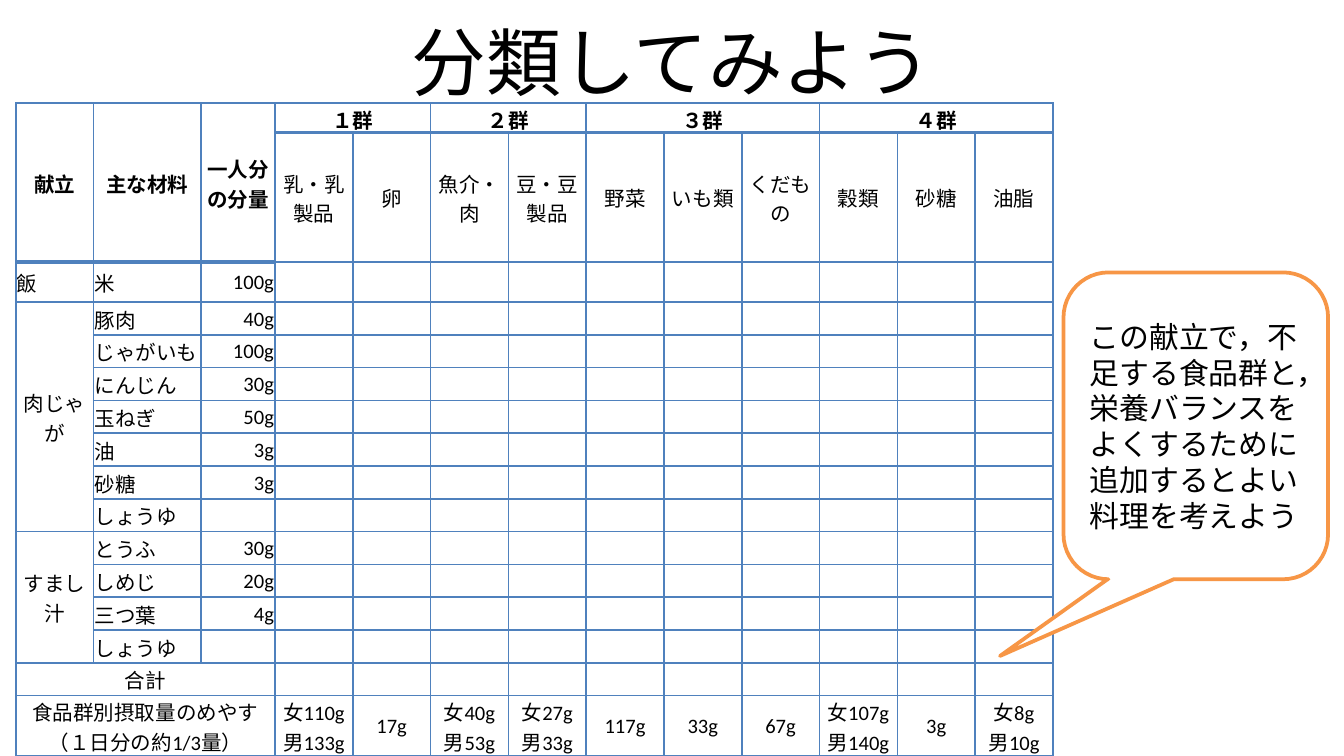
from dataclasses import dataclass

from lxml.etree import SubElement
from pptx import Presentation
from pptx.dml.color import RGBColor
from pptx.enum.shapes import MSO_SHAPE as Shape
from pptx.enum.text import MSO_ANCHOR as Anchor, PP_ALIGN as Align
from pptx.oxml.ns import qn
from pptx.util import Cm, Pt

COLORS = {"text": "000000", "grid": "4F81BD", "callout": "F79646", "white": "FFFFFF"}
FONT = "Calibri"


@dataclass
class Entry:
    """One filled table cell, with the rows and columns it covers."""
    row: int
    column: int
    text: str
    align: Align = Align.CENTER
    bold: bool = False
    rows: int = 1
    columns: int = 1
    vertical: bool = False


# Column headings: group name and its foods
GROUPS = {
    "１群": ["乳・乳製品", "卵"],
    "２群": ["魚介・肉", "豆・豆製品"],
    "３群": ["野菜", "いも類", "くだもの"],
    "４群": ["穀類", "砂糖", "油脂"],
}

# Dishes with their ingredients and amounts
DISHES = {
    "飯": [("米", "100g")],
    "肉じゃが": [("豚肉", "40g"), ("じゃがいも", "100g"), ("にんじん", "30g"),
             ("玉ねぎ", "50g"), ("油", "3g"), ("砂糖", "3g"), ("しょうゆ", "")],
    "すまし汁": [("とうふ", "30g"), ("しめじ", "20g"), ("三つ葉", "4g"), ("しょうゆ", "")],
}
TARGETS = ["女110g\n男133g", "17g", "女40g\n男53g", "女27g\n男33g", "117g",
           "33g", "67g", "女107g\n男140g", "3g", "女8g\n男10g"]

COLUMN_WIDTHS = [1.47, 2.03, 1.4] + [1.47] * 10
ROW_HEIGHTS = [0.56, 2.44, 0.76] + [0.62] * 12 + [1.14]


def rgb(name: str) -> RGBColor:
    return RGBColor.from_string(COLORS[name])


def style_paragraph(paragraph, size: float, align: Align, bold: bool = False) -> None:
    paragraph.alignment = align
    font = paragraph.font
    font.name, font.size, font.bold = FONT, Pt(size), bold
    font.color.rgb = rgb("text")


def style_cell(cell, bottom_width: float) -> None:
    """Outline a cell, clear its fill and tighten its margins."""
    properties = cell._tc.get_or_add_tcPr()
    for side in "LRTB":
        width = bottom_width if side == "B" else 1
        line = SubElement(properties, qn(f"a:ln{side}"), w=str(Pt(width)))
        fill = SubElement(line, qn("a:solidFill"))
        SubElement(fill, qn("a:srgbClr"), val=COLORS["grid"])
    cell.fill.background()
    cell.margin_left = cell.margin_right = cell.margin_top = Cm(0.02)
    cell.margin_bottom = 0
    cell.vertical_anchor = Anchor.MIDDLE
    style_paragraph(cell.text_frame.paragraphs[0], 11, Align.LEFT)


def write_entry(table, entry: Entry) -> None:
    cell = table.cell(entry.row, entry.column)
    if entry.rows > 1 or entry.columns > 1:
        cell.merge(table.cell(entry.row + entry.rows - 1,
                              entry.column + entry.columns - 1))
    if entry.vertical:
        cell._tc.get_or_add_tcPr().set("vert", "eaVert")
    paragraph = cell.text_frame.paragraphs[0]
    paragraph.text = entry.text
    style_paragraph(paragraph, 11, entry.align, entry.bold)


def collect_entries() -> list[Entry]:
    # Headings
    entries = [Entry(0, column, text, bold=True, rows=2)
               for column, text in enumerate(["献立", "主な材料", "一人分\nの分量"])]
    column = 3
    for group, foods in GROUPS.items():
        entries.append(Entry(0, column, group, bold=True, columns=len(foods)))
        for food in foods:
            entries.append(Entry(1, column, food, vertical=True))
            column += 1
    # Dishes
    row = 2
    for dish, ingredients in DISHES.items():
        align = Align.CENTER if len(ingredients) > 1 else Align.LEFT
        entries.append(Entry(row, 0, dish, align, rows=len(ingredients)))
        for name, amount in ingredients:
            entries.append(Entry(row, 1, name, Align.LEFT))
            if amount:
                entries.append(Entry(row, 2, amount, Align.RIGHT))
            row += 1
    # Total and daily targets
    entries.append(Entry(row, 0, "合計", columns=3))
    entries.append(Entry(row + 1, 0, "食品群別摂取量のめやす\n（１日分の約1/3量）", columns=3))
    entries += [Entry(row + 1, column, text) for column, text in enumerate(TARGETS, 3)]
    return entries


def add_title(slide) -> None:
    box = slide.shapes.add_textbox(Cm(1.27), Cm(-0.05), Cm(22.86), Cm(2.39))
    frame = box.text_frame
    frame.word_wrap = True
    frame.vertical_anchor = Anchor.MIDDLE
    paragraph = frame.paragraphs[0]
    paragraph.text = "分類してみよう"
    style_paragraph(paragraph, 40, Align.CENTER)


def add_food_table(slide) -> None:
    table = slide.shapes.add_table(
        len(ROW_HEIGHTS), len(COLUMN_WIDTHS), Cm(0.3), Cm(1.95),
        Cm(sum(COLUMN_WIDTHS)), Cm(sum(ROW_HEIGHTS))).table
    table.first_row = table.horz_banding = False
    for column, width in zip(table.columns, COLUMN_WIDTHS):
        column.width = Cm(width)
    for row, height in zip(table.rows, ROW_HEIGHTS):
        row.height = Cm(height)
    for row_index, row in enumerate(table.rows):
        for column_index, cell in enumerate(row.cells):
            heading = row_index == 0 or (row_index == 1 and column_index < 3)
            style_cell(cell, 2 if heading else 1)
    for entry in collect_entries():
        write_entry(table, entry)


def add_callout(slide) -> None:
    shape = slide.shapes.add_shape(
        Shape.ROUNDED_RECTANGULAR_CALLOUT, Cm(20.1), Cm(5.15), Cm(5), Cm(5.8))
    for index, value in enumerate([-0.74, 0.75, 0.17]):
        shape.adjustments[index] = value
    shape.shadow.inherit = False
    shape.fill.solid()
    shape.fill.fore_color.rgb = rgb("white")
    shape.line.color.rgb = rgb("callout")
    shape.line.width = Pt(2)
    frame = shape.text_frame
    frame.word_wrap = True
    frame.vertical_anchor = Anchor.MIDDLE
    paragraph = frame.paragraphs[0]
    paragraph.text = "この献立で，不足する食品群と，栄養バランスをよくするために追加するとよい料理を考えよう"
    style_paragraph(paragraph, 16, Align.LEFT)


def main() -> None:
    presentation = Presentation()
    presentation.slide_width, presentation.slide_height = Cm(25.4), Cm(14.29)
    slide = presentation.slides.add_slide(presentation.slide_layouts[6])
    add_title(slide)
    add_food_table(slide)
    add_callout(slide)
    presentation.save("out.pptx")


if __name__ == "__main__":
    main()
